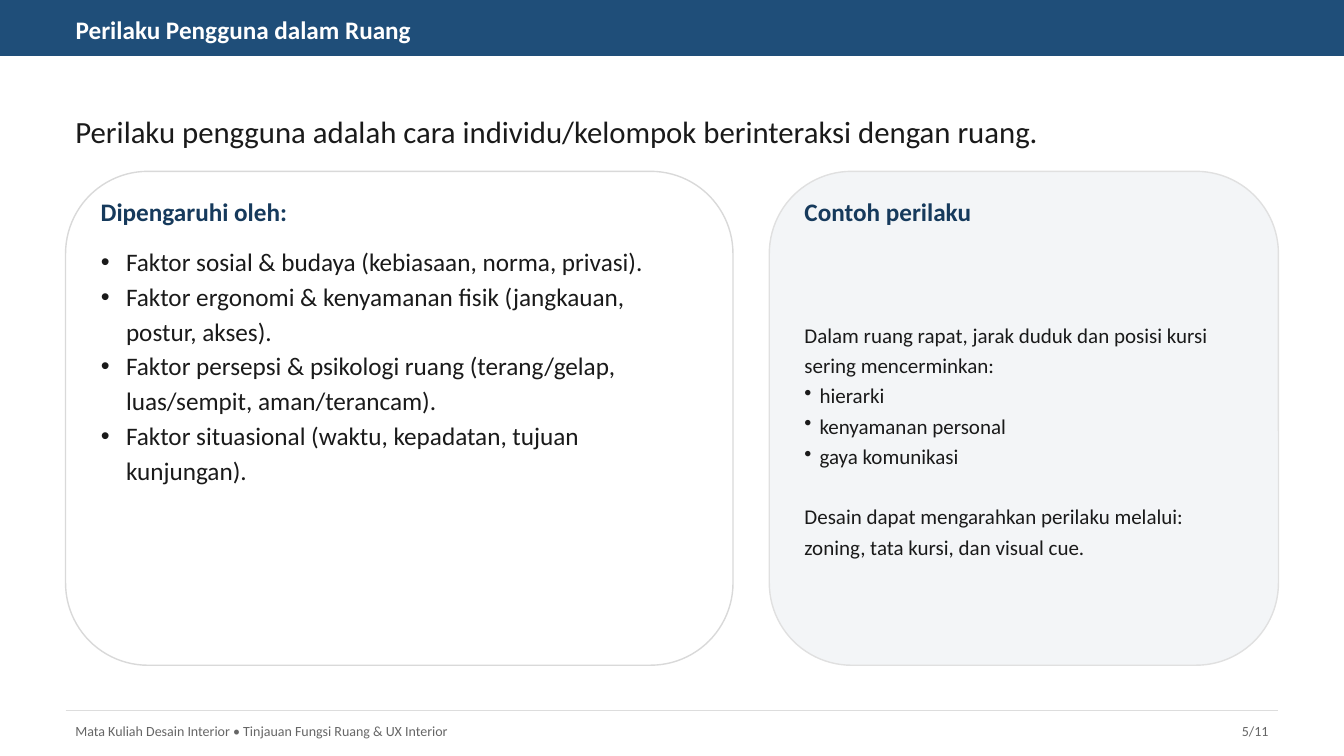
from dataclasses import dataclass

from lxml import etree
from pptx import Presentation
from pptx.dml.color import RGBColor
from pptx.enum.shapes import MSO_CONNECTOR, MSO_SHAPE
from pptx.enum.text import MSO_ANCHOR, MSO_AUTO_SIZE, PP_ALIGN
from pptx.oxml.ns import qn
from pptx.util import Inches, Pt

RECT, ROUND = MSO_SHAPE.RECTANGLE, MSO_SHAPE.ROUNDED_RECTANGLE
STRAIGHT = MSO_CONNECTOR.STRAIGHT
TOP, MIDDLE = MSO_ANCHOR.TOP, MSO_ANCHOR.MIDDLE
LEFT, RIGHT = PP_ALIGN.LEFT, PP_ALIGN.RIGHT
NO_FIT = MSO_AUTO_SIZE.NONE


@dataclass(frozen=True)
class Theme:
    font: str = "Calibri"
    white: str = "FFFFFF"
    bar: str = "1F4E79"
    head: str = "163A5C"
    ink: str = "1A1A1A"
    muted: str = "666666"
    panel: str = "F3F5F7"
    edge: str = "D9D9D9"
    rim: str = "E0E0E0"
    rule: str = "DDDDDD"
    lead_size: int = 22
    main_size: int = 18
    side_size: int = 15
    foot_size: int = 10


THEME = Theme()
WIDTH = 13.33
MARGIN = 0.65
SPAN = WIDTH - 2 * MARGIN
PAD = 0.25
CARD_TOP, CARD_HIGH = 1.7, 4.9

FACTORS = [
    "Faktor sosial & budaya (kebiasaan, norma, privasi).",
    "Faktor ergonomi & kenyamanan fisik (jangkauan, postur, akses).",
    "Faktor persepsi & psikologi ruang (terang/gelap, luas/sempit, aman/terancam).",
    "Faktor situasional (waktu, kepadatan, tujuan kunjungan).",
]
SIGNS = ["hierarki", "kenyamanan personal", "gaya komunikasi"]


def color(code):
    return RGBColor.from_string(code)


def add_panel(slide, kind, box, fill, line):
    shape = slide.shapes.add_shape(kind, *map(Inches, box))
    shape.shadow.inherit = False
    shape.fill.solid()
    shape.fill.fore_color.rgb = color(fill)
    shape.line.color.rgb = color(line)
    shape.line.width = Pt(1)


def add_rule(slide, top):
    line = slide.shapes.add_connector(
        STRAIGHT, Inches(MARGIN), Inches(top), Inches(MARGIN + SPAN), Inches(top))
    line.line.color.rgb = color(THEME.rule)
    line.line.width = Pt(1)
    etree.SubElement(line._element.spPr, qn("a:effectLst"))


def set_bullet(para, indent):
    props = para._p.get_or_add_pPr()
    props.set("marL", str(Inches(indent)))
    props.set("indent", str(-Inches(indent)))
    etree.SubElement(props, qn("a:buChar"), char="•")


def write(shape, lines, size, ink, bold=False, align=LEFT, anchor=MIDDLE,
          spacing=1.0, bullets=(), indent=0.25):
    frame = shape.text_frame
    frame.word_wrap = True
    frame.auto_size = NO_FIT
    frame.vertical_anchor = anchor
    frame.text = "\n".join(lines)
    for spot, para in enumerate(frame.paragraphs):
        if spot in bullets:
            set_bullet(para, indent)
        para.alignment = align
        para.line_spacing = spacing
        para.space_before = Pt(0)
        font = para.font
        font.name, font.size, font.bold = THEME.font, Pt(size), bold
        font.color.rgb = color(ink)
    return frame


def add_text(slide, box, lines, size, ink, **style):
    shape = slide.shapes.add_textbox(*map(Inches, box))
    return write(shape, lines, size, ink, **style)


def place(slide, holder, box):
    """Move a placeholder to its box, in front of the panels."""
    holder.left, holder.top, holder.width, holder.height = map(Inches, box)
    slide.shapes._spTree.append(holder._element)
    return holder


def add_card(slide, left, wide, fill, line, head):
    """Draw a headed card and return the left and width of its text."""
    add_panel(slide, ROUND, (left, CARD_TOP, wide, CARD_HIGH), fill, line)
    inner, room = left + PAD, wide - 2 * PAD
    add_text(slide, (inner, 1.9, room, 0.4), [head],
             THEME.main_size, THEME.head, bold=True)
    return inner, room


def main():
    deck = Presentation()
    deck.slide_width, deck.slide_height = Inches(WIDTH), Inches(7.5)
    slide = deck.slides.add_slide(deck.slide_layouts[1])
    title, body = slide.placeholders

    # Title bar and lead sentence
    add_panel(slide, RECT, (0, 0, WIDTH, 0.55), THEME.bar, THEME.bar)
    place(slide, title, (MARGIN, 0.12, SPAN, 0.35))
    write(title, ["Perilaku Pengguna dalam Ruang"],
          THEME.main_size, THEME.white, bold=True)
    add_text(slide, (MARGIN, 1.05, SPAN, 0.5),
             ["Perilaku pengguna adalah cara individu/kelompok berinteraksi dengan ruang."],
             THEME.lead_size, THEME.ink)

    # Factors card
    left, room = add_card(slide, MARGIN, 6.62, THEME.white, THEME.edge,
                          "Dipengaruhi oleh:")
    place(slide, body, (left, 2.35, room, 3.9))
    write(body, FACTORS, THEME.main_size, THEME.ink, anchor=TOP,
          spacing=1.15, bullets=range(len(FACTORS)))

    # Examples card
    left, room = add_card(slide, 7.63, 5.05, THEME.panel, THEME.rim,
                          "Contoh perilaku")
    lines = [
        "Dalam ruang rapat, jarak duduk dan posisi kursi sering mencerminkan:",
        *SIGNS,
        "Desain dapat mengarahkan perilaku melalui: zoning, tata kursi, dan visual cue.",
    ]
    frame = add_text(slide, (left, 2.35, room, 4), lines, THEME.side_size,
                     THEME.ink, spacing=1.2,
                     bullets=range(1, len(SIGNS) + 1), indent=0.15)
    frame.paragraphs[-1].space_before = Pt(21.6)

    # Footer
    add_rule(slide, 7.05)
    add_text(slide, (MARGIN, 7.1, SPAN - 1, 0.3),
             ["Mata Kuliah Desain Interior • Tinjauan Fungsi Ruang & UX Interior"],
             THEME.foot_size, THEME.muted)
    add_text(slide, (MARGIN + SPAN - 0.8, 7.1, 0.8, 0.3), ["5/11"],
             THEME.foot_size, THEME.muted, align=RIGHT)

    deck.save("out.pptx")


if __name__ == "__main__":
    main()
